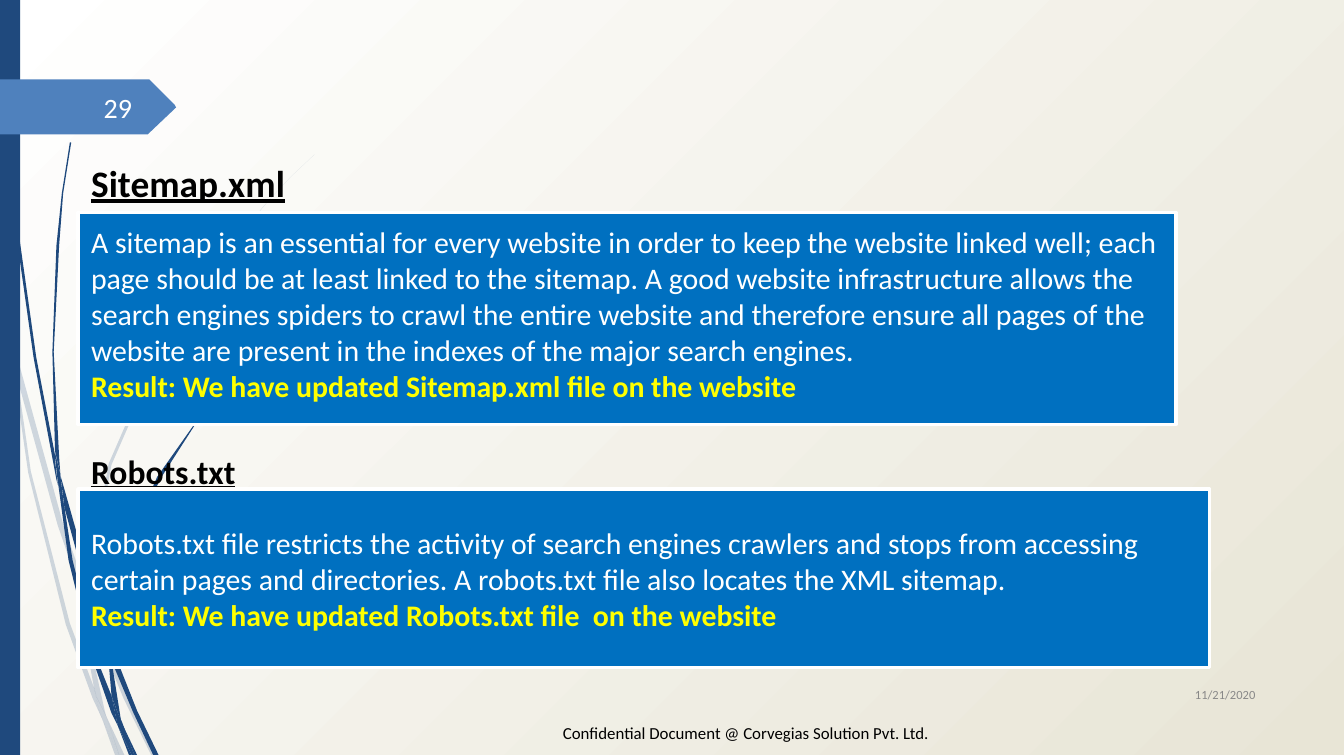
import pptx
import pptx.util
import pptx.dml.color
import pptx.enum.shapes
import pptx.enum.text
import pptx.oxml.ns
from lxml import etree

Inches, Pt = pptx.util.Inches, pptx.util.Pt
ANCHOR = pptx.enum.text.MSO_ANCHOR
ALIGN = pptx.enum.text.PP_ALIGN
qn = pptx.oxml.ns.qn

THEME = {
    "font": "Calibri",
    "navy": "1F497D", "tag": "4F81BD", "card": "0070C0", "white": "FFFFFF",
    "sand": "E8E5D6", "black": "000000", "grey": "888888", "result": "FFFF00",
    "first_heading": 20, "second_heading": 18, "body": 16,
    "number": 15, "footer": 9, "date": 6.7,
    "pale_opacity": 20,
}

HEADINGS = [("Sitemap.xml", "first_heading", 0), ("Robots.txt", "second_heading", 132)]
CARDS = [
    ((0.58, 1.58, 8.17, 1.58), 0.12,
     "A sitemap is an essential for every website in order to keep the website linked well; "
     "each page should be at least linked to the sitemap. A good website infrastructure allows "
     "the search engines spiders to crawl the entire website and therefore ensure all pages of "
     "the website are present in the indexes of the major search engines.",
     "Result: We have updated Sitemap.xml file on the website"),
    ((0.58, 3.64, 8.42, 1.33), 0.05,
     "Robots.txt file restricts the activity of search engines crawlers and stops from accessing "
     "certain pages and directories. A robots.txt file also locates the XML sitemap.",
     "Result: We have updated Robots.txt file  on the website"),
]
FOOTER = "Confidential Document @ Corvegias Solution Pvt. Ltd."
DATE = "11/21/2020"
NUMBER = "29"

# Outlines are in hundredths of an inch.
PALE_STEMS = [
    [(8, 262), (6, 241), (0, 211), (0, 224), (8, 258)],
    [(43, 391), (63, 449), (64, 439), (47, 390), (11, 259), (13, 282)],
    [(69, 455), (66, 446), (66, 457), (92, 520), (113, 563), (116, 563), (95, 518)],
    [(89, 563), (93, 563), (79, 533)],
    [(70, 512), (52, 464), (23, 351), (13, 282), (8, 262), (21, 352), (49, 465),
     (69, 520), (76, 535), (74, 530)],
    [(63, 449), (65, 484), (70, 512), (72, 519), (79, 533), (78, 529), (68, 484),
     (66, 457), (66, 456)],
    [(66, 437), (83, 346), (120, 261), (171, 184), (201, 148), (217, 131), (234, 115),
     (217, 131), (201, 148), (171, 183), (118, 260), (81, 345), (64, 437), (64, 439),
     (66, 446)],
    [(76, 535), (86, 563), (89, 563)],
    [(72, 519), (70, 512), (74, 530), (76, 535), (89, 563), (79, 533)],
]
NAVY_STEMS = [
    [(5, 82), (12, 174), (25, 266), (42, 357), (43, 361), (41, 343), (41, 339), (27, 266),
     (14, 174), (6, 82), (3, 36), (3, 0), (2, 0), (3, 36)],
    [(66, 444), (80, 483), (80, 475), (80, 473), (70, 442), (45, 354), (48, 378)],
    [(85, 486), (83, 480), (83, 492), (99, 530), (114, 562), (118, 562), (102, 529)],
    [(83, 518), (73, 493), (54, 417), (48, 378), (43, 358), (51, 417), (70, 494),
     (83, 531), (88, 541), (87, 537)],
    [(45, 354), (44, 340), (40, 262), (44, 183), (47, 144), (53, 106), (52, 106),
     (46, 144), (42, 183), (39, 262), (41, 336), (45, 353)],
    [(100, 562), (102, 562), (91, 539)],
    [(43, 358), (48, 379), (45, 354), (45, 353), (41, 337), (41, 340)],
    [(83, 475), (94, 413), (119, 357), (153, 304), (173, 281), (184, 269), (196, 258),
     (195, 258), (184, 268), (173, 280), (153, 304), (117, 355), (92, 413), (80, 473),
     (83, 480)],
    [(88, 541), (96, 562), (98, 562)],
    [(80, 483), (83, 518), (87, 529), (91, 539), (90, 536), (83, 492), (81, 488)],
    [(87, 529), (83, 518), (87, 537), (88, 541), (98, 562), (100, 562), (91, 538)],
]
NUMBER_TAG = [(0, 59), (110, 59), (111, 59), (130, 78), (131, 80), (130, 81),
              (111, 99), (110, 100), (0, 100)]


def rgb(name):
    return pptx.dml.color.RGBColor.from_string(THEME[name])


def paint(shape, color):
    shape.shadow.inherit = False
    shape.fill.solid()
    shape.fill.fore_color.rgb = rgb(color)
    shape.line.fill.background()


def add_outline(points, color, opacity=100):
    builder = slide.shapes.build_freeform(*points[0], scale=Inches(0.01))
    builder.add_line_segments(points[1:], close=True)
    outline = builder.convert_to_shape()
    paint(outline, color)
    if opacity < 100:
        tint = outline.fill._xPr.find(".//" + qn("a:srgbClr"))
        etree.SubElement(tint, qn("a:alpha")).set("val", str(opacity * 1000))


def add_rectangle(box, color):
    rectangle = slide.shapes.add_shape(
        pptx.enum.shapes.MSO_SHAPE.RECTANGLE, *map(Inches, box))
    paint(rectangle, color)
    return rectangle


def write(frame, lines, anchor=ANCHOR.TOP, align=ALIGN.LEFT):
    frame.word_wrap = True
    frame.vertical_anchor = anchor
    for index, (words, size, color, bold, underline, gap) in enumerate(lines):
        paragraph = frame.paragraphs[0] if index == 0 else frame.add_paragraph()
        paragraph.text = words
        paragraph.alignment = align
        if gap:
            paragraph.space_before = Pt(gap)
        font = paragraph.font
        font.name, font.size = THEME["font"], Pt(THEME[size])
        font.bold, font.underline = bold, underline
        font.color.rgb = rgb(color)


def add_text(box, lines, **placing):
    write(slide.shapes.add_textbox(*map(Inches, box)).text_frame, lines, **placing)


deck = pptx.Presentation()
deck.slide_width, deck.slide_height = Inches(10), Inches(5.62)
slide = deck.slides.add_slide(deck.slide_layouts[6])

backdrop = slide.background.fill
backdrop.gradient()
for stop, color in zip(backdrop.gradient_stops, ("white", "sand")):
    stop.color.rgb = rgb(color)
linear = slide.element.find(".//" + qn("a:lin"))
radial = etree.Element(qn("a:path"), {"path": "circle"})
etree.SubElement(radial, qn("a:fillToRect"), {"r": "100000", "b": "100000"})
linear.getparent().replace(linear, radial)

for stem in PALE_STEMS:
    add_outline(stem, "navy", THEME["pale_opacity"])
for stem in NAVY_STEMS:
    add_outline(stem, "navy")
add_rectangle((0, 0, 0.15, 5.62), "navy")
add_text((4.09, 5.33, 2.98, 0.25), [(FOOTER, "footer", "black", False, False, 0)])
add_outline(NUMBER_TAG, "tag")
for box, words, size, color in [((8.5, 5.02, 0.94, 0.3), DATE, "date", "grey"),
                                ((0.44, 0.65, 0.64, 0.3), NUMBER, "number", "white")]:
    add_text(box, [(words, size, color, False, False, 0)],
             anchor=ANCHOR.MIDDLE, align=ALIGN.RIGHT)

add_text((0.58, 1.14, 8.75, 2.86),
         [(words, size, "black", True, True, gap) for words, size, gap in HEADINGS])
for box, bottom_inset, explanation, result in CARDS:
    card = add_rectangle(box, "card")
    card.line.color.rgb = rgb("white")
    card.line.width = Pt(1.75)
    card.text_frame.margin_bottom = Inches(bottom_inset)
    write(card.text_frame, [(explanation, "body", "white", False, False, 0),
                            (result, "body", "result", True, False, 0)],
          anchor=ANCHOR.MIDDLE)

deck.save("out.pptx")
